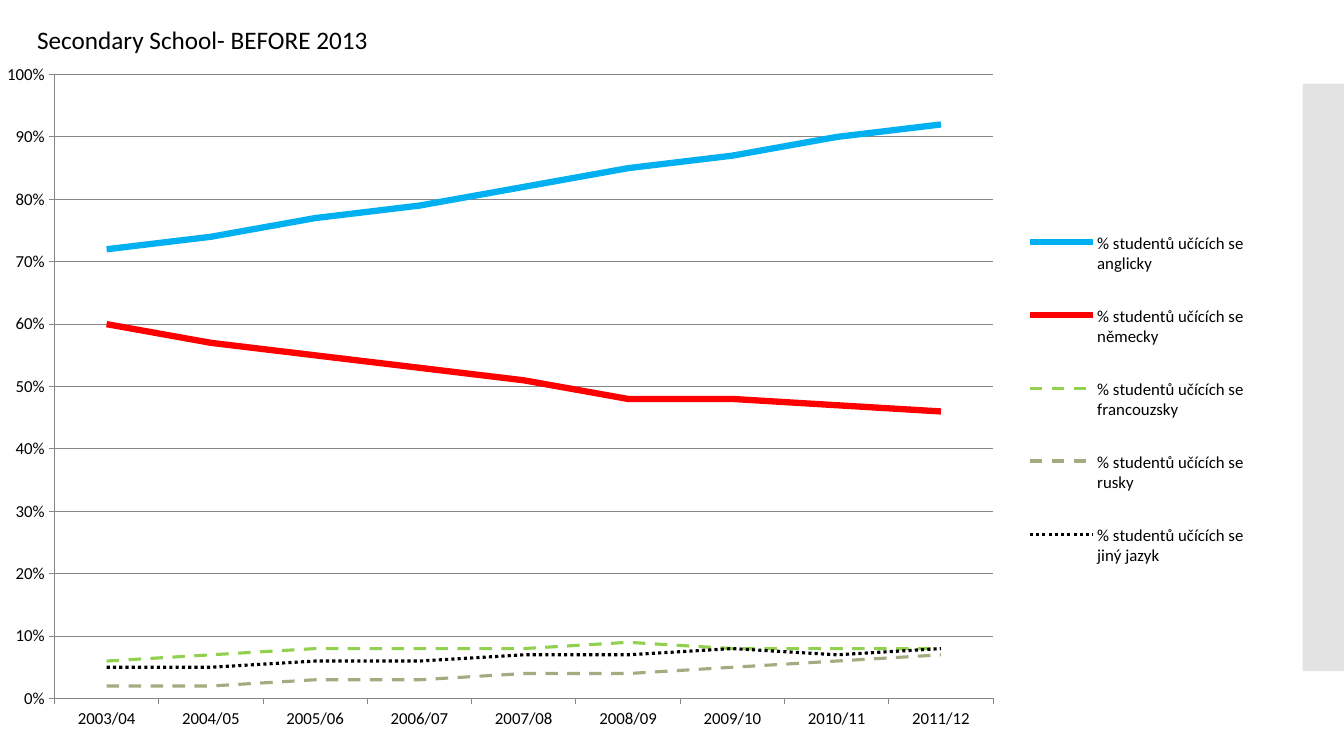
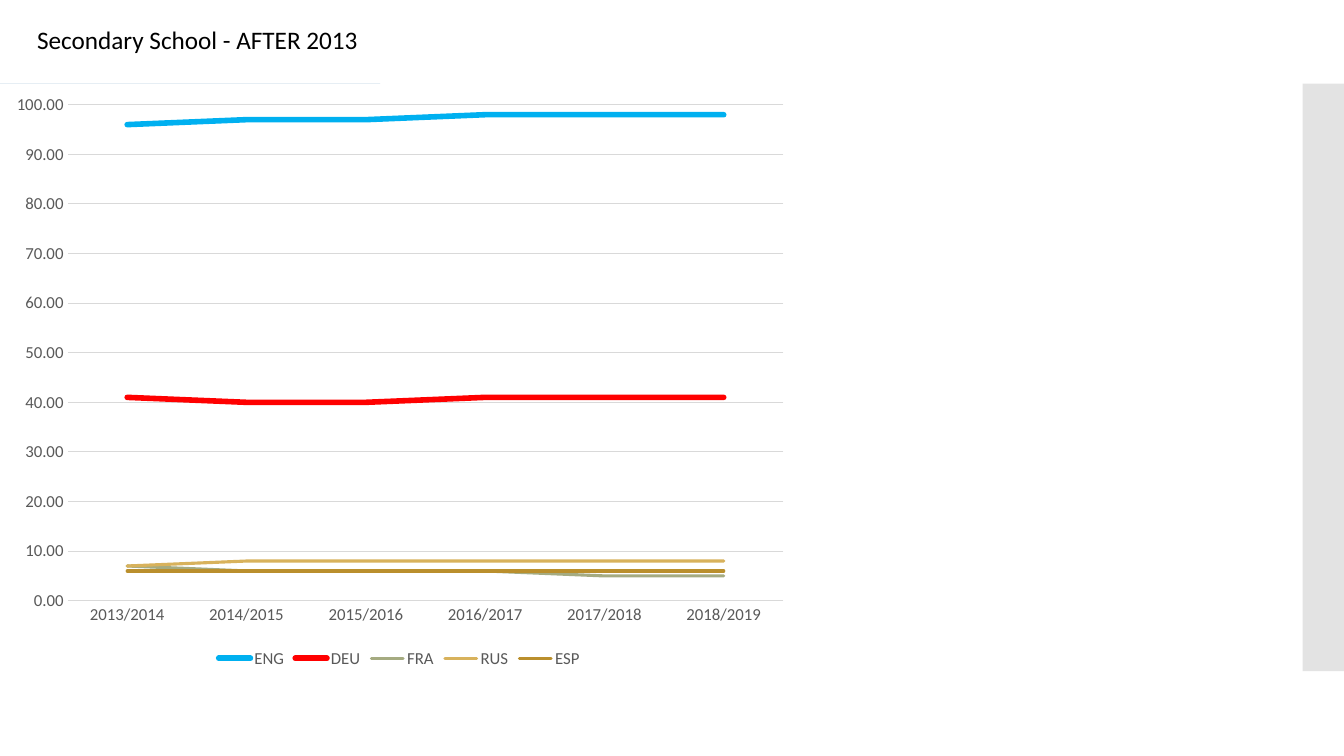
import pptx
import pptx.chart.data
import pptx.dml.color
import pptx.enum.chart
import pptx.enum.dml
import pptx.enum.shapes
import pptx.enum.text
import pptx.oxml.ns
import pptx.util
import lxml.etree

RGB = pptx.dml.color.RGBColor
WHITE = RGB(0xFF, 0xFF, 0xFF)
BLACK = RGB(0x00, 0x00, 0x00)
GREY = RGB(0x59, 0x59, 0x59)
AXIS = RGB(0x86, 0x86, 0x86)
PALE = RGB(0xD9, 0xD9, 0xD9)
BAND = RGB(0xC8, 0xC8, 0xC8)
STEEL = RGB(0x94, 0xB6, 0xD2)
BLUE = RGB(0x00, 0xB0, 0xF0)
RED = RGB(0xFF, 0x00, 0x00)
GREEN = RGB(0x92, 0xD0, 0x50)
SAGE = RGB(0xA5, 0xAB, 0x81)
SAND = RGB(0xD8, 0xB2, 0x5C)
GOLD = RGB(0xBA, 0x8F, 0x2D)

FONT = "Calibri"
WIDE, HIGH = pptx.util.Inches(13.33), pptx.util.Inches(7.5)
TICK = pptx.enum.chart.XL_TICK_MARK
SIDE = pptx.enum.chart.XL_LEGEND_POSITION
DASH = pptx.enum.dml.MSO_LINE
SOLID = DASH.SOLID

# Boxes in inches: left, top, width, height
TITLE_BOX = (0.27, 0.19, 5.31, 0.4)
# Shared panels: box, colour, opacity in percent
PANELS = [
    ((0, 0.83, 3.77, 5.83), STEEL, 100),
    ((12.92, 0.83, 0.41, 5.83), BAND, 50),
]

# Plot and key boxes are in inches from the chart's corner
BEFORE = {
    "title": "Secondary School- BEFORE 2013",
    "box": (0, 0.59, 12.6, 6.69),
    "cats": [f"{y}/{(y + 1) % 100:02d}" for y in range(2003, 2012)],
    "lead": "% studentů učících se ",
    "lines": [
        ("anglicky", BLUE, 4.5, SOLID,
         (0.72, 0.74, 0.77, 0.79, 0.82, 0.85, 0.87, 0.9, 0.92)),
        ("německy", RED, 4.5, SOLID,
         (0.6, 0.57, 0.55, 0.53, 0.51, 0.48, 0.48, 0.47, 0.46)),
        ("francouzsky", GREEN, 2.25, DASH.DASH,
         (0.06, 0.07, 0.08, 0.08, 0.08, 0.09, 0.08, 0.08, 0.08)),
        ("rusky", SAGE, 2.25, DASH.DASH,
         (0.02, 0.02, 0.03, 0.03, 0.04, 0.04, 0.05, 0.06, 0.07)),
        ("jiný jazyk", BLACK, 2.25, DASH.ROUND_DOT,
         (0.05, 0.05, 0.06, 0.06, 0.07, 0.07, 0.08, 0.07, 0.08)),
    ],
    "ink": BLACK, "grid": AXIS, "tick": TICK.OUTSIDE, "cap": "flat",
    "scale": {"minimum_scale": 0, "maximum_scale": 1, "major_unit": 0.1},
    "digits": "0%", "bare": False, "side": SIDE.RIGHT,
    "plot": (0.54, 0.15, 9.31, 6.19),
    "key": (10.08, 1.4, 2.39, 3.95),
}

AFTER = {
    "title": "Secondary School - AFTER 2013",
    "box": (0, 0.83, 7.92, 5.84),
    "cats": [f"{y}/{y + 1}" for y in range(2013, 2019)],
    "lead": "",
    "lines": [
        ("ENG", BLUE, 4, SOLID, (96, 97, 97, 98, 98, 98)),
        ("DEU", RED, 4, SOLID, (41, 40, 40, 41, 41, 41)),
        ("FRA", SAGE, 2.25, SOLID, (7, 6, 6, 6, 5, 5)),
        ("RUS", SAND, 2.25, SOLID, (7, 8, 8, 8, 8, 8)),
        ("ESP", GOLD, 2.25, SOLID, (6, 6, 6, 6, 6, 6)),
    ],
    "ink": GREY, "grid": PALE, "tick": TICK.NONE, "cap": "rnd",
    "scale": {"minimum_scale": 0, "maximum_scale": 100, "major_unit": 10},
    "digits": "0.00", "bare": True, "side": SIDE.BOTTOM,
    "plot": (0.67, 0.21, 7.1, 4.92),
    "key": None,
}


def put(item, **vals):
    """Set each named value on the item."""
    for name, val in vals.items():
        setattr(item, name, val)


def place(box):
    return [pptx.util.Inches(n) for n in box]


def sub(node, tag, **attrs):
    return lxml.etree.SubElement(node, pptx.oxml.ns.qn(tag), attrs)


def pen(line, ink, width, dash=SOLID):
    line.color.rgb = ink
    put(line, width=pptx.util.Pt(width), dash_style=dash)


def style(font, ink, size):
    put(font, name=FONT, size=pptx.util.Pt(size))
    font.color.rgb = ink


def pin(node, index, box, whole, inner=False):
    """Fix a chart part by its box within the whole chart's box."""
    for old in node.xpath("c:layout"):
        node.remove(old)
    frame = sub(node, "c:layout")
    node.insert(index, frame)
    rule = sub(frame, "c:manualLayout")
    if inner:
        sub(rule, "c:layoutTarget", val="inner")
    for edge in "xy":
        sub(rule, f"c:{edge}Mode", val="edge")
    for edge, size, full in zip("xywh", box, whole[2:] * 2):
        sub(rule, f"c:{edge}", val=f"{size / full:.4f}")


def add_panel(slide, box, ink, share):
    """Draw a plain panel and move it to the shared layout."""
    panel = slide.shapes.add_shape(
        pptx.enum.shapes.MSO_SHAPE.RECTANGLE, *place(box))
    panel.shadow.inherit = False
    panel.fill.solid()
    panel.fill.fore_color.rgb = ink
    panel.line.fill.background()
    if share < 100:
        tint = panel.element.xpath("p:spPr/a:solidFill/a:srgbClr")[0]
        sub(tint, "a:alpha", val=str(share * 1000))
    slide.slide_layout.shapes.element.append(panel.element)


def add_title(slide, box, text):
    frame = slide.shapes.add_textbox(*place(box)).text_frame
    put(frame, word_wrap=True, text=text,
        auto_size=pptx.enum.text.MSO_AUTO_SIZE.SHAPE_TO_FIT_TEXT)
    style(frame.paragraphs[0].runs[0].font, BLACK, 18)


def add_back(root):
    """Give the chart a white ground without an outline."""
    shape = sub(root, "c:spPr")
    root.xpath("c:chart")[0].addnext(shape)
    sub(sub(shape, "a:solidFill"), "a:srgbClr", val=str(WHITE))
    sub(sub(shape, "a:ln"), "a:noFill")


def add_graph(slide, box, look):
    # Data
    data = pptx.chart.data.CategoryChartData(number_format=look["digits"])
    data.categories = look["cats"]
    for name, *_, vals in look["lines"]:
        data.add_series(look["lead"] + name, vals)
    chart = slide.shapes.add_chart(
        pptx.enum.chart.XL_CHART_TYPE.LINE, *place(box), data).chart
    put(chart, has_title=False, has_legend=True)
    style(chart.font, look["ink"], 12)
    root = chart.element
    add_back(root)

    # Lines
    plot = chart.plots[0]
    plot.vary_by_categories = False
    for row, (_, ink, width, dash, _) in zip(plot.series, look["lines"]):
        row.smooth = False
        pen(row.format.line, ink, width, dash)
    for stroke in root.xpath(".//c:ser/c:spPr/a:ln"):
        stroke.set("cap", look["cap"])

    # Axes
    cat, val = chart.category_axis, chart.value_axis
    for axis in (cat, val):
        put(axis, major_tick_mark=look["tick"], minor_tick_mark=TICK.NONE)
        pen(axis.format.line, look["grid"], 0.75)
        style(axis.tick_labels.font, look["ink"], 12)
    if look["bare"]:
        val.format.line.fill.background()
    put(val, has_major_gridlines=True, **look["scale"])
    put(val.tick_labels, number_format=look["digits"],
        number_format_is_linked=False)
    pen(val.major_gridlines.format.line, look["grid"], 0.75)

    # Legend and inner layout
    put(chart.legend, position=look["side"], include_in_layout=False)
    style(chart.legend.font, look["ink"], 12)
    area = root.xpath("c:chart/c:plotArea")[0]
    pin(area, 0, look["plot"], box, inner=True)
    if look["key"]:
        pin(root.xpath("c:chart/c:legend")[0], 1, look["key"], box)


def main():
    deck = pptx.Presentation()
    put(deck, slide_width=WIDE, slide_height=HIGH)
    blank = deck.slide_layouts[6]
    slides = [deck.slides.add_slide(blank) for _ in range(2)]
    for panel in PANELS:
        add_panel(slides[0], *panel)
    for slide, look in zip(slides, (BEFORE, AFTER)):
        add_graph(slide, look["box"], look)
        add_title(slide, TITLE_BOX, look["title"])
    deck.save("out.pptx")


if __name__ == "__main__":
    main()
